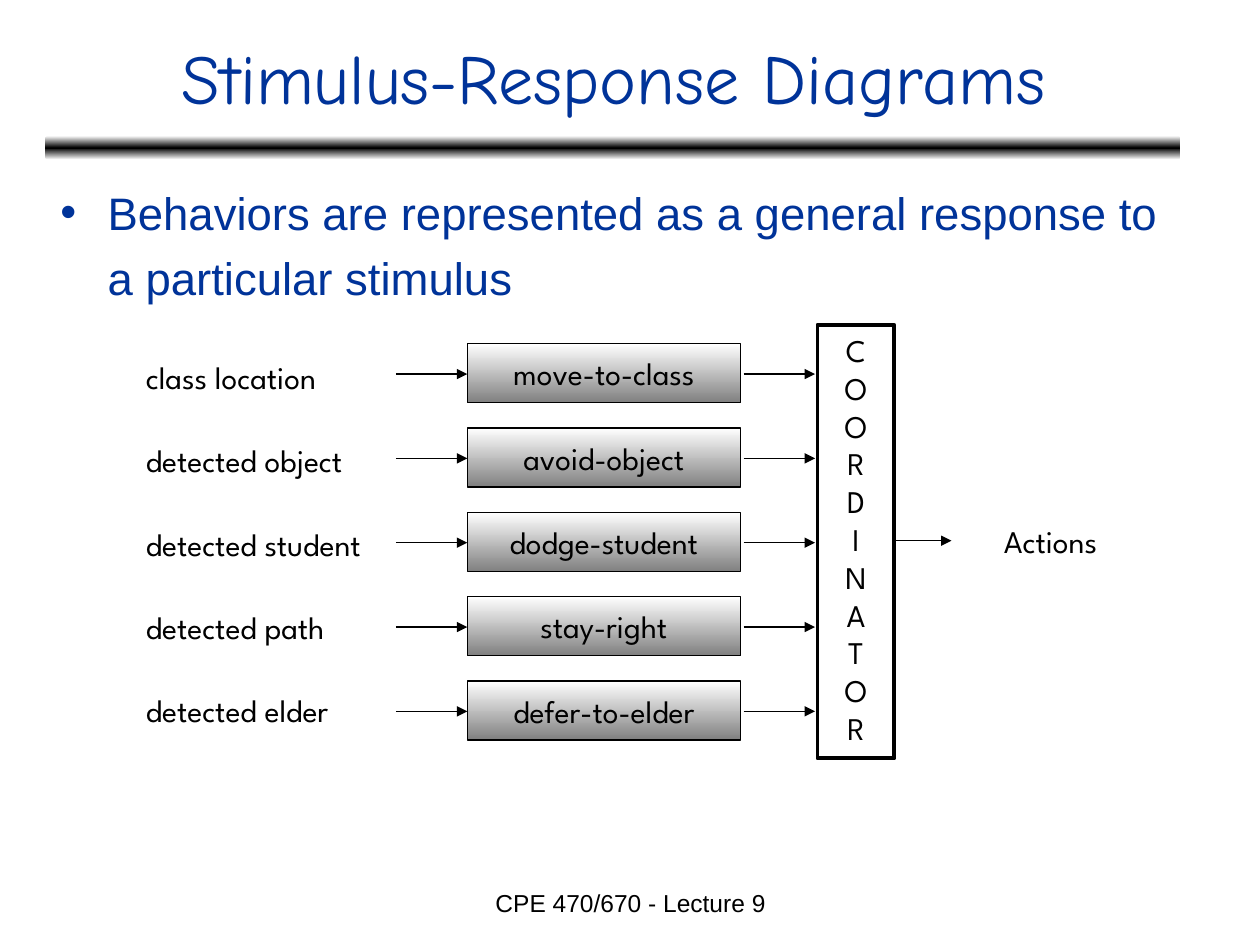
"""Build the Stimulus-Response Diagrams slide."""
from lxml.etree import SubElement
from copy import deepcopy
from pptx import Presentation
from pptx.dml.color import RGBColor
from pptx.enum.shapes import MSO_CONNECTOR, MSO_SHAPE
from pptx.enum.text import MSO_ANCHOR, MSO_AUTO_SIZE, PP_ALIGN
from pptx.oxml.ns import qn
from pptx.util import Cm, Pt

BLUE = RGBColor(0x00, 0x33, 0x99)
BLACK = RGBColor(0x00, 0x00, 0x00)
GRAY = RGBColor(0x80, 0x80, 0x80)
WHITE = RGBColor(0xFF, 0xFF, 0xFF)


def write(tf, text, font="League Spartan", size=18, color=BLACK,
          align=PP_ALIGN.LEFT, anchor=MSO_ANCHOR.TOP, wrap=False,
          fit=MSO_AUTO_SIZE.NONE):
    tf.word_wrap = wrap
    tf.auto_size = fit
    tf.vertical_anchor = anchor
    tf.text = text
    for p in tf.paragraphs:
        p.alignment = align
        for r in p.runs:
            r.font.name = font
            r.font.size = Pt(size)
            r.font.color.rgb = color


def shade(sp, colors):
    sp.shadow.inherit = False
    sp.fill.gradient()
    sp.fill.gradient_angle = 270
    stops = sp._element.spPr.find(qn("a:gradFill")).find(qn("a:gsLst"))
    while len(stops) < len(colors):
        stops.append(deepcopy(stops[-1]))
    for i, (stop, color) in enumerate(zip(sp.fill.gradient_stops, colors)):
        stop.position = i / (len(colors) - 1)
        stop.color.rgb = color


prs = Presentation()
prs.slide_width, prs.slide_height = Cm(25.4), Cm(19.05)
s = prs.slides.add_slide(prs.slide_layouts[5])

title = s.shapes.title
title.left, title.top, title.width, title.height = Cm(0.94), Cm(0.28), Cm(22.86), Cm(2.51)
write(title.text_frame, "Stimulus-Response Diagrams", font="Comic Neue", size=40,
      color=BLUE, align=PP_ALIGN.CENTER, anchor=MSO_ANCHOR.MIDDLE, wrap=True)

bar = s.shapes.add_shape(MSO_SHAPE.ROUNDED_RECTANGLE, Cm(0.91), Cm(2.74), Cm(22.89), Cm(0.48))
shade(bar, [WHITE, BLACK, WHITE])
bar.line.fill.background()

footer = s.shapes.add_textbox(Cm(8.69), Cm(17.78), Cm(8.05), Cm(0.89))
write(footer.text_frame, "CPE 470/670 - Lecture 9", font="Arial", size=14,
      align=PP_ALIGN.CENTER, wrap=True)

body = s.shapes.add_textbox(Cm(0.97), Cm(3.38), Cm(22.86), Cm(3.73))
write(body.text_frame,
      "Behaviors are represented as a general response to a particular stimulus",
      font="Arial", size=26, color=BLUE, wrap=True)
p = body.text_frame.paragraphs[0]
p.line_spacing = 1.2
pPr = p._p.get_or_add_pPr()
pPr.set("marL", str(Cm(0.95)))
pPr.set("indent", str(-Cm(0.95)))
SubElement(pPr, qn("a:buFont"), typeface="Arial")
SubElement(pPr, qn("a:buChar"), char="•")

behaviors = [
    ("class location", 4.32, "move-to-class"),
    ("detected object", 4.83, "avoid-object"),
    ("detected student", 5.21, "dodge-student"),
    ("detected path", 4.37, "stay-right"),
    ("detected elder", 4.52, "defer-to-elder"),
]
labels = [("Actions", 19.99, 10.39, 2.59)]
arrows = [(18.06, 19.18, 10.9)]
for i, (stimulus, width, response) in enumerate(behaviors):
    sp = s.shapes.add_shape(MSO_SHAPE.RECTANGLE, Cm(9.42), Cm(6.93 + 1.7 * i), Cm(5.51), Cm(1.19))
    shade(sp, [WHITE, GRAY])
    sp.line.color.rgb = BLACK
    sp.line.width = Pt(0.75)
    write(sp.text_frame, response, align=PP_ALIGN.CENTER, anchor=MSO_ANCHOR.MIDDLE)
    labels.append((stimulus, 2.69, 7.09 + 1.68 * i, width))
    y = 7.54 + 1.7 * i
    arrows += [(7.98, 9.42, y), (14.99, 16.43, y)]

coordinator = s.shapes.add_shape(MSO_SHAPE.RECTANGLE, Cm(16.48), Cm(6.55), Cm(1.55), Cm(8.74))
coordinator.shadow.inherit = False
coordinator.fill.background()
coordinator.line.color.rgb = BLACK
coordinator.line.width = Pt(2.25)
write(coordinator.text_frame, "\n".join("COORDINATOR"), align=PP_ALIGN.CENTER,
      wrap=True, fit=MSO_AUTO_SIZE.SHAPE_TO_FIT_TEXT)

for text, x, y, width in labels:
    label = s.shapes.add_textbox(Cm(x), Cm(y), Cm(width), Cm(1.02))
    write(label.text_frame, text, fit=MSO_AUTO_SIZE.SHAPE_TO_FIT_TEXT)

for x1, x2, y in arrows:
    arrow = s.shapes.add_connector(MSO_CONNECTOR.STRAIGHT, Cm(x1), Cm(y), Cm(x2), Cm(y))
    arrow.line.color.rgb = BLACK
    arrow.line.width = Pt(0.75)
    SubElement(arrow.line._get_or_add_ln(), qn("a:tailEnd"), type="triangle")
    SubElement(arrow._element.spPr, qn("a:effectLst"))

prs.save("out.pptx")
